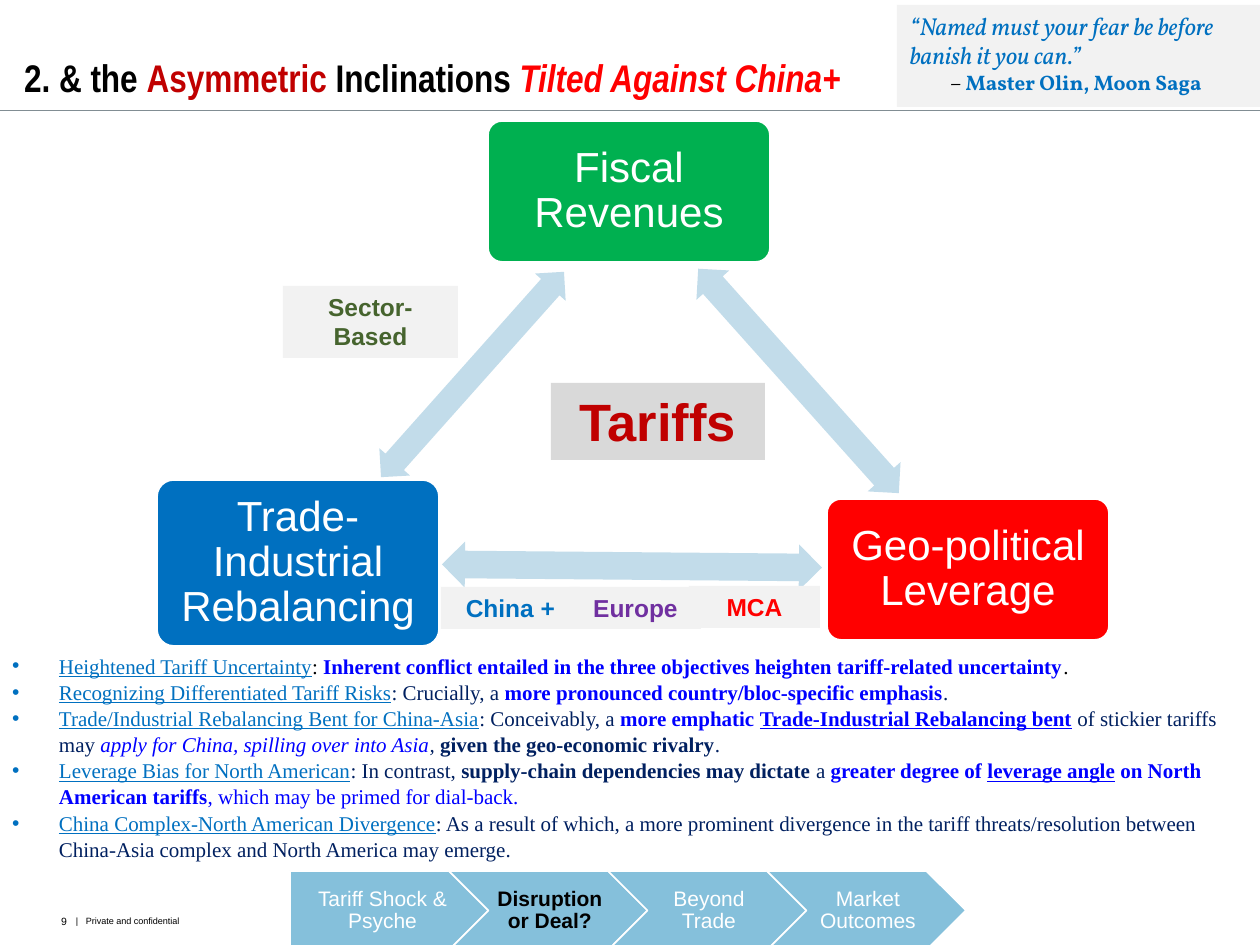
from lxml.etree import SubElement
from pptx import Presentation
from pptx.dml.color import RGBColor
from pptx.enum.shapes import MSO_CONNECTOR, MSO_SHAPE
from pptx.enum.text import MSO_ANCHOR, MSO_AUTO_SIZE, PP_ALIGN
from pptx.oxml.ns import qn
from pptx.util import Pt

EMU_PER_PX = 914400 / 126
SLIDE_SIZE = (1260, 945)

BLACK, WHITE, NAVY = "000000", "FFFFFF", "002060"
SKY, BLUE, RED, DARK_RED = "0070C0", "0000FF", "FF0000", "C00000"
PALE_GREY, ARROW_BLUE, STEP_BLUE = "F2F2F2", "C2DCEA", "85C0DB"

# A run is (text, colour, marks), where marks holds any of b, i and u.
TITLE = [("2. & the ", BLACK, "b"), ("Asymmetric", DARK_RED, "b"),
         (" Inclinations ", BLACK, "b"), ("Tilted Against China+", RED, "bi")]

BULLETS = [
    [("Heightened Tariff Uncertainty", SKY, "u"), (": ", BLACK, ""),
     ("Inherent conflict entailed in the three objectives heighten "
      "tariff-related uncertainty", BLUE, "b"), (".", BLACK, "")],
    [("Recognizing Differentiated Tariff Risks", SKY, "u"),
     (": Crucially, a ", NAVY, ""),
     ("more pronounced country/bloc-specific emphasis", BLUE, "b"), (".", NAVY, "")],
    [("Trade/Industrial Rebalancing Bent for China-Asia", SKY, "u"),
     (": Conceivably, a ", NAVY, ""), ("more emphatic ", BLUE, "b"),
     ("Trade-Industrial Rebalancing bent", BLUE, "bu"),
     (" of stickier tariffs may ", NAVY, ""),
     ("apply for China, spilling over into Asia", BLUE, "i"), (", ", NAVY, "i"),
     ("given the geo-economic rivalry", NAVY, "b"), (".", NAVY, "")],
    [("Leverage Bias for North American", SKY, "u"), (": In contrast, ", NAVY, ""),
     ("supply-chain dependencies may dictate ", NAVY, "b"), ("a ", NAVY, ""),
     ("greater degree of ", BLUE, "b"), ("leverage angle", BLUE, "bu"),
     (" on North American tariffs", BLUE, "b"),
     (", which may be primed for dial-back.", BLUE, "")],
    [("China Complex-North American Divergence", SKY, "u"),
     (": As a result of which, a more prominent divergence in the tariff "
      "threats/resolution between China-Asia complex and North America may emerge.",
      NAVY, "")],
]

QUOTE = [("“Named must your fear be before banish it you can.”", SKY, "i")]
SPEAKER = [("– ", BLACK, ""), ("Master Olin, Moon Saga", SKY, "b")]

# text, fill, box
OBJECTIVES = [
    ("Fiscal Revenues", "00B050", (488, 121, 282, 141)),
    ("Geo-political Leverage", RED, (827, 499, 282, 141)),
    ("Trade-Industrial Rebalancing", SKY, (157, 480, 282, 166)),
]
# box before turning, degrees
ARROWS = [((648, 359, 301, 44), 48.2), ((442, 543, 380, 46), 0.5),
          ((335, 354, 275, 41), 311.7)]
# text, text colour, fill, size, box
LABELS = [
    ("Tariffs", DARK_RED, "D9D9D9", 30, (551, 383, 214, 77)),
    ("China +", SKY, PALE_GREY, 14, (441, 587, 139, 42)),
    ("MCA", RED, PALE_GREY, 14, (689, 586, 131, 42)),
    ("Sector-Based", "46642E", PALE_GREY, 14, (283, 286, 175, 72)),
    ("Europe", "7030A0", PALE_GREY, 14, (570, 587, 131, 42)),
]
STEPS = ["Tariff Shock & Psyche", "Disruption or Deal?", "Beyond Trade", "Market Outcomes"]
CURRENT_STEP = 1
STEP_LEFT, STEP_TOP, STEP_WIDTH, STEP_HEIGHT, STEP_PITCH = 290, 871, 199, 79, 159

# text, size, alignment, box, insets
FOOTER = [
    ("9", 6, PP_ALIGN.RIGHT, (0, 897, 67, 48), (0, 0, 0, 0)),
    ("|   Private and confidential", 5.2, PP_ALIGN.LEFT, (67, 897, 1034, 48), (9, 0, 44, 0)),
]


def px(*lengths):
    return [round(length * EMU_PER_PX) for length in lengths]


def rgb(hex_colour):
    return RGBColor.from_string(hex_colour)


def set_frame(frame, anchor=MSO_ANCHOR.TOP, insets=(13, 6, 13, 6)):
    frame.word_wrap = True
    frame.auto_size = MSO_AUTO_SIZE.NONE
    frame.vertical_anchor = anchor
    (frame.margin_left, frame.margin_top,
     frame.margin_right, frame.margin_bottom) = px(*insets)


def write(paragraph, runs, size, font="Arial", align=PP_ALIGN.LEFT, spacing=None):
    paragraph.alignment = align
    paragraph.space_before = Pt(0)
    if spacing:
        paragraph.line_spacing = spacing
    for text, colour, marks in runs:
        run = paragraph.add_run()
        run.text = text
        run.font.name, run.font.size = font, Pt(size)
        run.font.color.rgb = rgb(colour)
        run.font.bold, run.font.italic, run.font.underline = (m in marks for m in "biu")


def indent(paragraph, left, first_line=0):
    properties = paragraph._p.get_or_add_pPr()
    for name, length in zip(("marL", "indent"), px(left, first_line)):
        properties.set(name, str(length))
    return properties


def place(placeholder, box):
    (placeholder.left, placeholder.top,
     placeholder.width, placeholder.height) = px(*box)


def add_block(slide, preset, box, fill, outline=None):
    block = slide.shapes.add_shape(preset, *px(*box))
    block.shadow.inherit = False
    block.fill.solid()
    block.fill.fore_color.rgb = rgb(fill)
    if outline:
        block.line.color.rgb = rgb(outline)
        block.line.width = Pt(1)
    else:
        block.line.fill.background()
    return block


def add_header(slide):
    rule = slide.shapes.add_connector(MSO_CONNECTOR.STRAIGHT, *px(0, 110, 1260, 110))
    rule.line.color.rgb = rgb("818D93")
    rule.line.width = Pt(0.5)
    SubElement(rule._element.spPr, qn("a:effectLst"))

    title = slide.shapes.title
    place(title, (24, 1, 853, 110))
    set_frame(title.text_frame, MSO_ANCHOR.BOTTOM, (0, 11, 0, 11))
    write(title.text_frame.paragraphs[0], TITLE, 22, "Arial Narrow")

    frame = add_block(slide, MSO_SHAPE.RECTANGLE, (897, 5, 363, 102), PALE_GREY).text_frame
    set_frame(frame)
    write(frame.paragraphs[0], QUOTE, 14, "Vollkorn")
    speaker = frame.add_paragraph()
    indent(speaker, 40)
    write(speaker, SPEAKER, 12, "Vollkorn")


def add_triangle(slide):
    for text, fill, box in OBJECTIVES:
        card = add_block(slide, MSO_SHAPE.ROUNDED_RECTANGLE, box, fill, WHITE)
        card.adjustments[0] = 0.1
        set_frame(card.text_frame, MSO_ANCHOR.MIDDLE, (13, 13, 13, 13))
        write(card.text_frame.paragraphs[0], [(text, WHITE, "")], 24,
              align=PP_ALIGN.CENTER, spacing=0.9)
    for box, degrees in ARROWS:
        arrow = add_block(slide, MSO_SHAPE.LEFT_RIGHT_ARROW, box, ARROW_BLUE)
        arrow.adjustments[0], arrow.adjustments[1] = 0.6, 0.5
        arrow.rotation = degrees
    for text, colour, fill, size, box in LABELS:
        frame = add_block(slide, MSO_SHAPE.RECTANGLE, box, fill).text_frame
        set_frame(frame)
        write(frame.paragraphs[0], [(text, colour, "b")], size, align=PP_ALIGN.CENTER)


def add_bullets(slide):
    body = slide.placeholders[1]
    place(body, (-1, 646, 1260, 242))
    frame = body.text_frame
    set_frame(frame)
    for number, runs in enumerate(BULLETS):
        paragraph = frame.add_paragraph() if number else frame.paragraphs[0]
        properties = indent(paragraph, 47, -47)
        SubElement(properties, qn("a:buFont"), typeface="Arial")
        SubElement(properties, qn("a:buChar"), char="•")
        write(paragraph, runs, 12, "Times New Roman", spacing=1.04)


def add_steps(slide):
    for number, text in enumerate(STEPS):
        preset = MSO_SHAPE.CHEVRON if number else MSO_SHAPE.PENTAGON
        box = (STEP_LEFT + number * STEP_PITCH, STEP_TOP, STEP_WIDTH, STEP_HEIGHT)
        frame = add_block(slide, preset, box, STEP_BLUE, WHITE).text_frame
        set_frame(frame, MSO_ANCHOR.MIDDLE, (6 if number else 9, 5, 3, 5))
        colour, marks = (BLACK, "b") if number == CURRENT_STEP else (WHITE, "")
        write(frame.paragraphs[0], [(text, colour, marks)], 12,
              align=PP_ALIGN.CENTER, spacing=0.9)


def add_footer(slide):
    for text, size, align, box, insets in FOOTER:
        frame = slide.shapes.add_textbox(*px(*box)).text_frame
        set_frame(frame, MSO_ANCHOR.MIDDLE, insets)
        write(frame.paragraphs[0], [(text, BLACK, "")], size, align=align)


def main():
    deck = Presentation()
    deck.slide_width, deck.slide_height = px(*SLIDE_SIZE)
    slide = deck.slides.add_slide(deck.slide_layouts[1])
    for add_part in (add_header, add_triangle, add_bullets, add_steps, add_footer):
        add_part(slide)
    deck.save("out.pptx")


if __name__ == "__main__":
    main()
